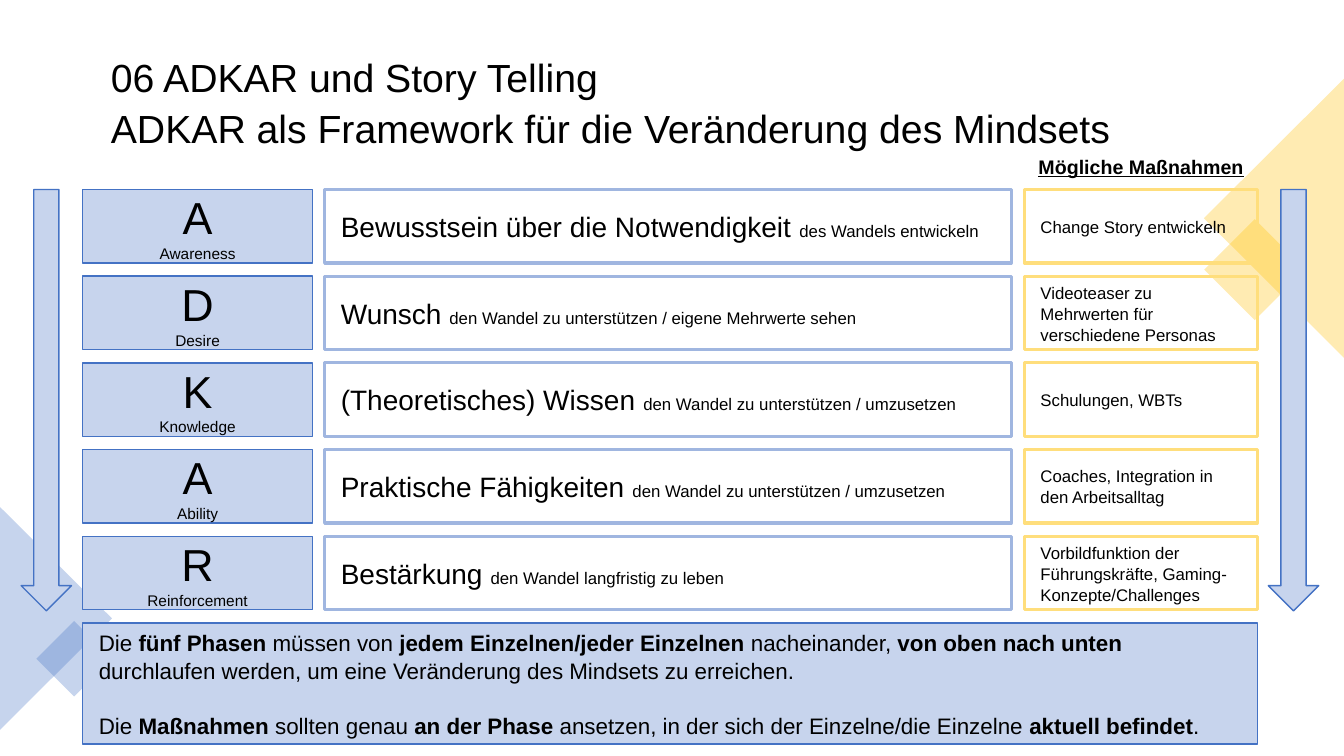
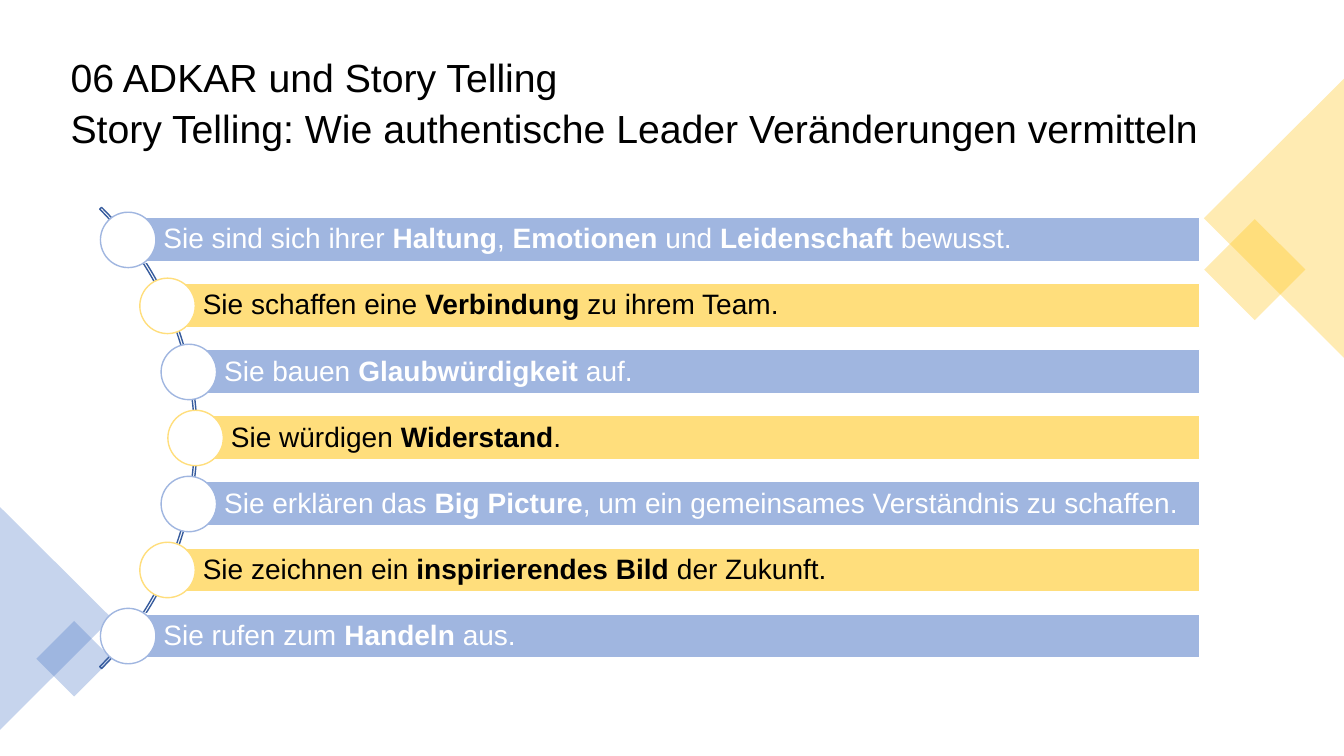
"""Build two slides on ADKAR and story telling."""
from dataclasses import dataclass
from math import sqrt

from lxml.etree import SubElement
from pptx import Presentation
from pptx.dml.color import RGBColor as Rgb
from pptx.enum.shapes import MSO_SHAPE as Shape
from pptx.enum.text import MSO_ANCHOR as Anchor, MSO_AUTO_SIZE as AutoSize, PP_ALIGN as Align
from pptx.oxml.ns import qn
from pptx.util import Inches, Pt


@dataclass(frozen=True)
class Theme:
    """Colours, font and type sizes of the deck."""
    font: str = "Arial"
    ink: str = "000000"
    white: str = "FFFFFF"
    blue: str = "4472C4"
    mid_blue: str = "A0B6E0"
    pale_blue: str = "C7D4ED"
    deep_blue: str = "365B9D"
    gold: str = "FFC000"
    pale_gold: str = "FFDE7C"
    title: float = 28
    letter: float = 32
    lead: float = 20
    summary: float = 16
    heading: float = 14
    detail: float = 12
    label: float = 11


@dataclass(frozen=True)
class Grid:
    """Columns and rows of the phase overview, in inches."""
    letters: tuple = (0.82, 2.28)
    meanings: tuple = (3.22, 6.81)
    measures: tuple = (10.16, 2.31)
    arrows: tuple = (0.21, 12.58)
    top: float = 1.88
    pitch: float = 0.86
    height: float = 0.73

    def cell(self, column, row):
        """Return the box of a cell."""
        left, width = column
        return left, self.top + row * self.pitch, width, self.height


THEME = Theme()
GRID = Grid()
CARD_INSETS = (0.16, 0.12, 0.16, 0.12)
BAR_INSETS = (0.35, 0.06, 0.06, 0.06)
SECTION = "06 ADKAR und Story Telling"

PHASES = [
    ("A", "Awareness", "Bewusstsein über die Notwendigkeit ", "des Wandels entwickeln",
     "Change Story entwickeln"),
    ("D", "Desire", "Wunsch ", "den Wandel zu unterstützen / eigene Mehrwerte sehen",
     "Videoteaser zu Mehrwerten für verschiedene Personas"),
    ("K", "Knowledge", "(Theoretisches) Wissen ", "den Wandel zu unterstützen / umzusetzen",
     "Schulungen, WBTs"),
    ("A", "Ability", "Praktische Fähigkeiten ", "den Wandel zu unterstützen / umzusetzen",
     "Coaches, Integration in den Arbeitsalltag"),
    ("R", "Reinforcement", "Bestärkung ", "den Wandel langfristig zu leben",
     "Vorbildfunktion der Führungskräfte, Gaming-Konzepte/Challenges"),
]
SUMMARY = [
    "Die **fünf Phasen **müssen von **jedem Einzelnen/jeder Einzelnen **nacheinander, "
    "**von oben nach unten **durchlaufen werden, um eine Veränderung des Mindsets zu erreichen.",
    "Die **Maßnahmen **sollten genau **an der Phase **ansetzen, in der sich der Einzelne/"
    "die Einzelne **aktuell befindet**.",
]
PRINCIPLES = [
    "Sie sind sich ihrer **Haltung**, **Emotionen** und **Leidenschaft** bewusst.",
    "Sie schaffen eine **Verbindung** zu ihrem Team.",
    "Sie bauen **Glaubwürdigkeit** auf.",
    "Sie würdigen **Widerstand**.",
    "Sie erklären das **Big Picture**, um ein gemeinsames Verständnis zu schaffen.",
    "Sie zeichnen ein **inspirierendes Bild **der Zukunft.",
    "Sie rufen zum **Handeln** aus.",
]


def place(item, box):
    """Move and size an item to a box in inches."""
    item.left, item.top, item.width, item.height = map(Inches, box)


def draw(slide, kind, box, fill=None, line=None, weight=1):
    """Add a flat preset shape."""
    shape = slide.shapes.add_shape(kind, *map(Inches, box))
    shape.shadow.inherit = False
    if fill:
        shape.fill.solid()
        shape.fill.fore_color.rgb = Rgb.from_string(fill)
    else:
        shape.fill.background()
    if line:
        shape.line.color.rgb = Rgb.from_string(line)
        shape.line.width = Pt(weight)
    else:
        shape.line.fill.background()
    return shape


def prepare(frame, insets):
    """Set wrapping, anchor and insets of a text frame."""
    frame.word_wrap = True
    frame.auto_size = AutoSize.NONE
    frame.vertical_anchor = Anchor.MIDDLE
    frame.margin_left, frame.margin_top, frame.margin_right, frame.margin_bottom = map(Inches, insets)


def add_run(paragraph, text, size, color=THEME.ink, bold=False):
    """Append one formatted run."""
    run = paragraph.add_run()
    run.text = text
    font = run.font
    font.name, font.size, font.bold = THEME.font, Pt(size), bold
    font.color.rgb = Rgb.from_string(color)
    return run


def write(frame, lines, color=THEME.ink, align=Align.LEFT, spacing=1.0, gap=0):
    """Fill a frame with lines of (text, size) pieces; ** toggles bold."""
    for index, pieces in enumerate(lines):
        paragraph = frame.add_paragraph() if index else frame.paragraphs[0]
        paragraph.alignment = align
        paragraph.line_spacing = spacing
        if index and gap:
            paragraph.space_before = Pt(gap)
        for text, size in pieces:
            for part, words in enumerate(text.split("**")):
                if words:
                    add_run(paragraph, words, size, color, part % 2 == 1)


def card(slide, box, lines, fill=None, line=None, weight=1, **style):
    """Add a framed box with text."""
    shape = draw(slide, Shape.RECTANGLE, box, fill, line, weight)
    prepare(shape.text_frame, CARD_INSETS)
    write(shape.text_frame, lines, **style)


def decorate(slide):
    """Put the translucent corner shapes on the layout of the slide."""
    corners = [
        (Shape.RECTANGLE, (12.09, 2.32, 0.71, 0.71), 45, THEME.gold),
        (Shape.ISOSCELES_TRIANGLE, (11.25, 1.47, 2.77, 1.39), 270, THEME.gold),
        (Shape.ISOSCELES_TRIANGLE, (-0.55, 5.58, 2.21, 1.11), 90, THEME.blue),
        (Shape.RECTANGLE, (0.47, 6.27, 0.53, 0.53), 45, THEME.blue),
    ]
    for kind, box, angle, color in corners:
        corner = draw(slide, kind, box, color)
        corner.rotation = angle
        tint = corner.element.spPr.find(qn("a:solidFill")).find(qn("a:srgbClr"))
        SubElement(tint, qn("a:alpha"), val="30000")
        slide.slide_layout.shapes.element.append(corner.element)


def add_slide(deck, topic, left, width):
    """Add a slide with its two-line title."""
    slide = deck.slides.add_slide(deck.slide_layouts[5])
    title = slide.shapes.title
    place(title, (left, 0.48, width, 1.04))
    prepare(title.text_frame, (0.1, 0.05, 0.1, 0.05))
    write(title.text_frame, [[(SECTION, THEME.title)], [(topic, THEME.title)]], spacing=1.07)
    return slide


def add_phases(slide):
    """Add the phase rows, side arrows, heading and summary."""
    for row, (letter, name, lead, detail, measure) in enumerate(PHASES):
        card(slide, GRID.cell(GRID.letters, row), [[(letter, THEME.letter)], [(name, THEME.label)]],
             THEME.pale_blue, THEME.blue, align=Align.CENTER)
        card(slide, GRID.cell(GRID.meanings, row), [[(lead, THEME.lead), (detail, THEME.detail)]],
             line=THEME.mid_blue, weight=2.25)
        card(slide, GRID.cell(GRID.measures, row), [[(measure, THEME.detail)]],
             line=THEME.pale_gold, weight=2.25, spacing=1.04)
    card(slide, (0.82, 6.18, 11.65, 1.2), [[(text, THEME.summary)] for text in SUMMARY],
         THEME.pale_blue, THEME.blue, spacing=1.04, gap=19)
    for left in GRID.arrows:
        draw(slide, Shape.DOWN_ARROW, (left, GRID.top, 0.5, 4.18), THEME.pale_blue, THEME.blue)
    heading = slide.shapes.add_textbox(*map(Inches, (10.14, 1.43, 2.57, 0.44))).text_frame
    prepare(heading, CARD_INSETS)
    add_run(heading.paragraphs[0], "Mögliche Maßnahmen", THEME.heading, bold=True).font.underline = True


def add_principles(slide):
    """Add the bars that start along an arc."""
    arc_x, radius, arc_size = -1.28, 3.22, 6.47
    first, last, right = 2.38, 6.31, 11.9
    bar_height, dot = 0.44, 0.55
    arc_y = (first + last) / 2
    arc = draw(slide, Shape.BLOCK_ARC,
               (arc_x - arc_size / 2, arc_y - arc_size / 2, arc_size, arc_size), line=THEME.deep_blue)
    for index, value in enumerate((189, 27, 0.004)):
        arc.adjustments[index] = value
    palette = [(THEME.mid_blue, THEME.white), (THEME.pale_gold, THEME.ink)]
    step = (last - first) / (len(PRINCIPLES) - 1)
    for row, principle in enumerate(PRINCIPLES):
        y = first + row * step
        x = arc_x + sqrt(radius ** 2 - (y - arc_y) ** 2)
        accent, ink = palette[row % 2]
        bar = draw(slide, Shape.RECTANGLE, (x, y - bar_height / 2, right - x, bar_height),
                   accent, THEME.white)
        prepare(bar.text_frame, BAR_INSETS)
        write(bar.text_frame, [[(principle, THEME.lead)]], ink, spacing=0.9)
        draw(slide, Shape.OVAL, (x - dot / 2, y - dot / 2, dot, dot), THEME.white, accent)


def main():
    """Build and save the deck."""
    deck = Presentation()
    deck.slide_width, deck.slide_height = Inches(13.33), Inches(7.5)
    phases = add_slide(deck, "ADKAR als Framework für die Veränderung des Mindsets", 1, 11.18)
    decorate(phases)
    add_phases(phases)
    principles = add_slide(
        deck, "Story Telling: Wie authentische Leader Veränderungen vermitteln", 0.6, 11.89)
    add_principles(principles)
    deck.save("out.pptx")


if __name__ == "__main__":
    main()
